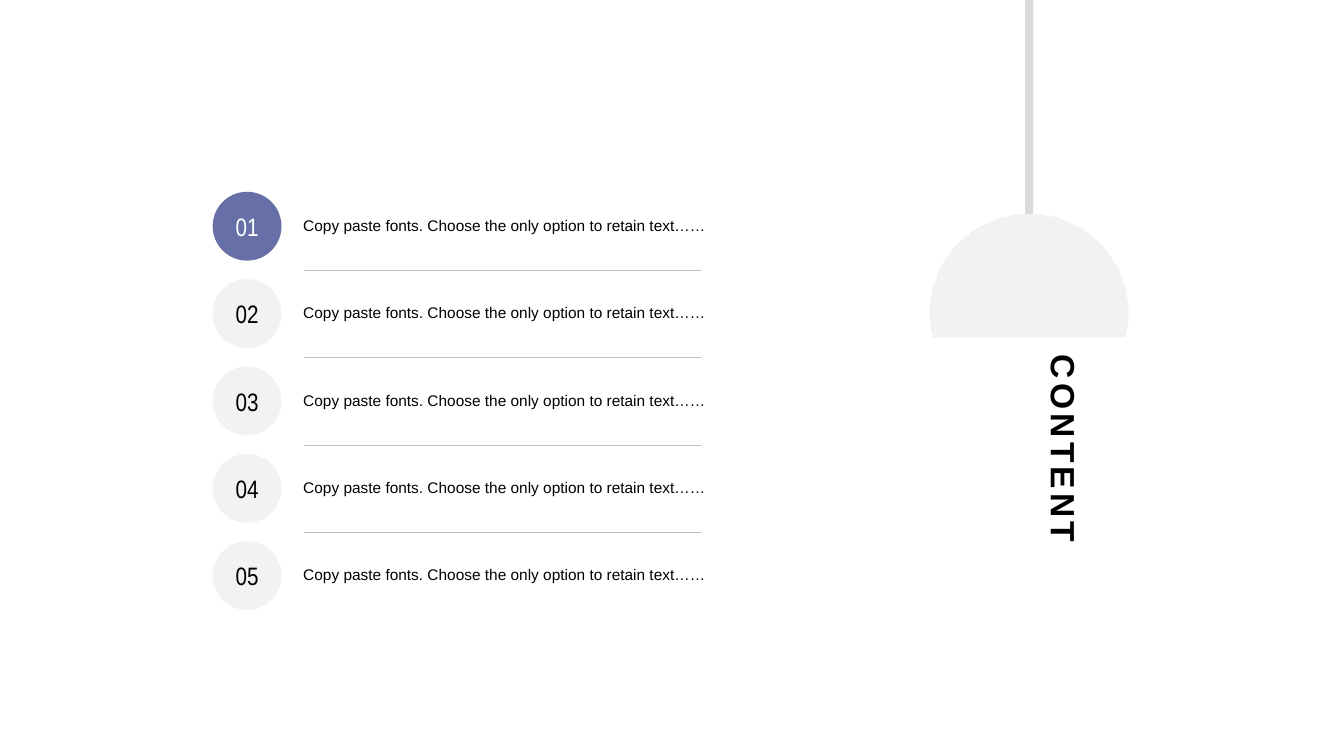
from math import cos, radians, sin

from lxml.etree import SubElement
from pptx import Presentation
from pptx.dml.color import RGBColor
from pptx.enum.shapes import MSO_CONNECTOR, MSO_SHAPE
from pptx.enum.text import MSO_ANCHOR, MSO_AUTO_SIZE, PP_ALIGN
from pptx.oxml.ns import qn
from pptx.util import Pt

COLORS = {
    "accent": "676FA7",
    "pale": "F2F2F2",
    "rod": "D9D9D9",
    "rule": "BFBFBF",
    "black": "000000",
    "white": "FFFFFF",
}


def paint(shape, color):
    shape.shadow.inherit = False
    shape.fill.solid()
    shape.fill.fore_color.rgb = RGBColor.from_string(COLORS[color])
    shape.line.fill.background()


def write(shape, text, size, font="Arial", color="black", bold=False,
          align=PP_ALIGN.LEFT, anchor=MSO_ANCHOR.TOP, line_spacing=1.0, tracking=0):
    frame = shape.text_frame
    frame.word_wrap = True
    frame.auto_size = MSO_AUTO_SIZE.NONE
    frame.vertical_anchor = anchor
    paragraph = frame.paragraphs[0]
    paragraph.alignment = align
    paragraph.line_spacing = line_spacing
    run = paragraph.add_run()
    run.text = text
    run.font.size = Pt(size)
    run.font.name = font
    run.font.bold = bold
    run.font.color.rgb = RGBColor.from_string(COLORS[color])
    if tracking:
        run.font._element.set("spc", str(tracking * 100))


presentation = Presentation()
presentation.slide_width = Pt(960)
presentation.slide_height = Pt(540)
slide = presentation.slides.add_slide(presentation.slide_layouts[5])

# Lamp: rod and shade, a circle cut off below its centre
lamp_x, shade_y, shade_radius = 735.1, 223.4, 70.8
rod = slide.shapes.add_shape(MSO_SHAPE.RECTANGLE, Pt(lamp_x - 2.9), Pt(0), Pt(5.8), Pt(240.5))
paint(rod, "rod")

rim = [
    (lamp_x + shade_radius * cos(radians(angle)), shade_y + shade_radius * sin(radians(angle)))
    for angle in range(166, 375, 2)
]
builder = slide.shapes.build_freeform(*rim[0], scale=Pt(1))
builder.add_line_segments(rim[1:], close=True)
paint(builder.convert_to_shape(), "pale")

# Vertical title
title = slide.shapes.title
title.left, title.top, title.width, title.height = Pt(738), Pt(249.8), Pt(43.9), Pt(155.5)
write(title, "CONTENT", 24, bold=True, tracking=3)
title.text_frame._txBody.bodyPr.set("vert", "eaVert")

# Numbered entries with a rule between neighbours
entries = ["Copy paste fonts. Choose the only option to retain text……"] * 5
first_top, pitch, diameter = 137, 62.4, 49.2
for index, entry in enumerate(entries):
    top = first_top + index * pitch
    badge = slide.shapes.add_shape(
        MSO_SHAPE.OVAL, Pt(151.9), Pt(top), Pt(diameter), Pt(diameter))
    paint(badge, "pale" if index else "accent")
    badge.text_frame.margin_left = badge.text_frame.margin_right = Pt(0)
    write(badge, f"{index + 1:02}", 18, font="Arial Narrow",
          color="black" if index else "white",
          align=PP_ALIGN.CENTER, anchor=MSO_ANCHOR.MIDDLE)

    label = slide.shapes.add_textbox(Pt(209.5), Pt(top + 11.1), Pt(320.4), Pt(27.2))
    write(label, entry, 11, line_spacing=1.2)

    if index < len(entries) - 1:
        rule_y = Pt(top + 56)
        rule = slide.shapes.add_connector(
            MSO_CONNECTOR.STRAIGHT, Pt(217.4), rule_y, Pt(501), rule_y)
        rule.line.color.rgb = RGBColor.from_string(COLORS["rule"])
        rule.line.width = Pt(0.25)
        SubElement(rule._element.spPr, qn("a:effectLst"))

presentation.save("out.pptx")
